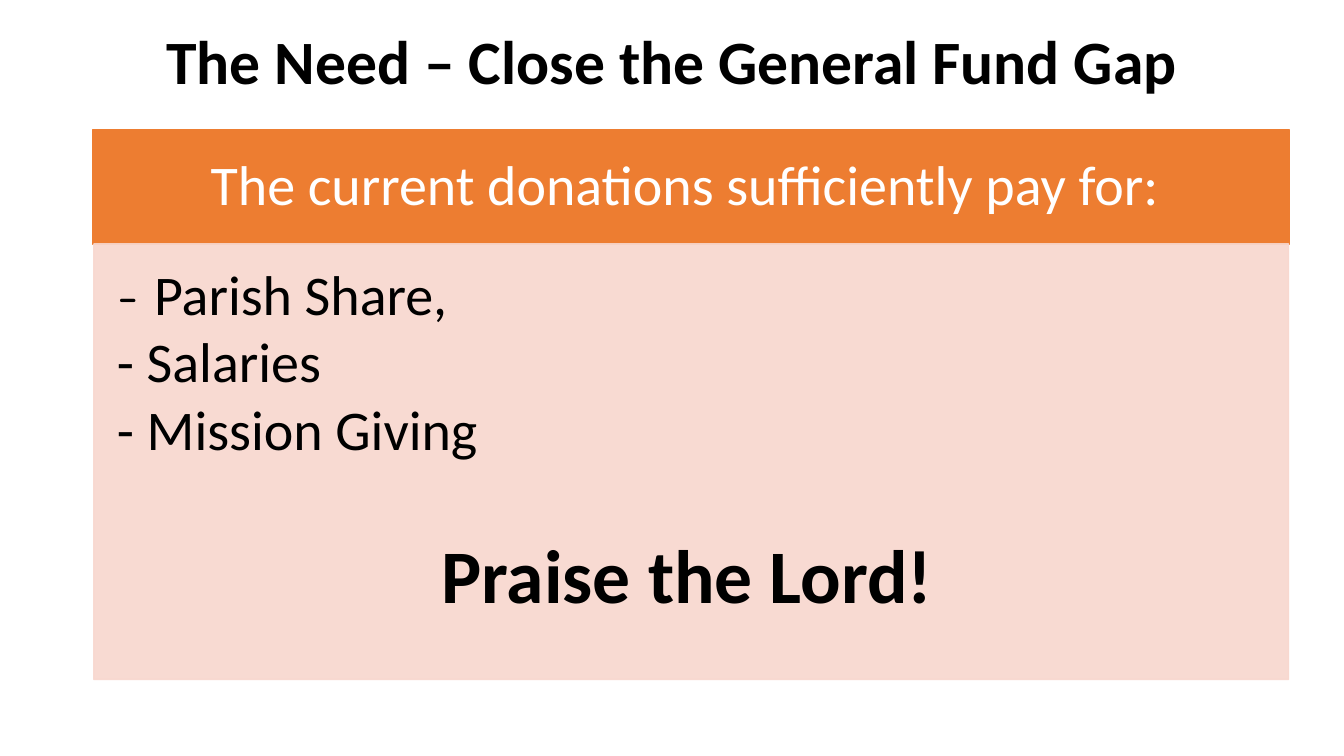
from dataclasses import dataclass

from lxml import etree
from pptx import Presentation
from pptx.dml.color import RGBColor
from pptx.enum.shapes import MSO_SHAPE
from pptx.enum.text import MSO_ANCHOR, PP_ALIGN
from pptx.oxml.ns import qn
from pptx.util import Inches, Pt

RECTANGLE = MSO_SHAPE.RECTANGLE
TOP, MIDDLE = MSO_ANCHOR.TOP, MSO_ANCHOR.MIDDLE
LEFT, CENTER = PP_ALIGN.LEFT, PP_ALIGN.CENTER
COLORS = {"black": "000000", "white": "FFFFFF", "orange": "ED7D31", "blush": "F8D7CE"}
HANGING = 0.31


@dataclass
class Panel:
    left: float
    top: float
    width: float
    height: float
    color: str
    opacity: int
    anchor: MSO_ANCHOR
    insets: tuple[float, float, float, float]


BANNER = Panel(0.92, 1.29, 11.87, 1.13, "orange", 100, MIDDLE, (0.31, 0.18, 0.31, 0.18))
BODY = Panel(0.93, 2.42, 11.85, 4.32, "blush", 90, TOP, (0.23, 0.23, 0.31, 0.35))


def set_frame(frame, anchor, insets):
    frame.word_wrap = True
    frame.vertical_anchor = anchor
    (frame.margin_left, frame.margin_top,
     frame.margin_right, frame.margin_bottom) = map(Inches, insets)


def draw_panel(page, panel: Panel):
    box = page.shapes.add_shape(RECTANGLE, Inches(panel.left), Inches(panel.top),
                                Inches(panel.width), Inches(panel.height))
    box.shadow.inherit = False
    box.fill.solid()
    box.line.width = Pt(1)
    for paint in (box.fill.fore_color, box.line.color):
        paint.rgb = RGBColor.from_string(COLORS[panel.color])
    if panel.opacity < 100:
        for color in box._element.spPr.iter(qn("a:srgbClr")):
            etree.SubElement(color, qn("a:alpha")).set("val", str(panel.opacity * 1000))
    set_frame(box.text_frame, panel.anchor, panel.insets)
    return box.text_frame


def add_span(para, text: str, *, size: int = 40, color: str = "black",
             bold: bool = False, font: str = "Calibri") -> None:
    span = para.add_run()
    span.text = text
    span.font.name = font
    span.font.size = Pt(size)
    span.font.bold = bold
    span.font.color.rgb = RGBColor.from_string(COLORS[color])


def add_para(frame, *, align=LEFT, before: float = 0, after: float = 0,
             hanging: float = 0):
    first = frame.paragraphs[0]
    para = frame.add_paragraph() if first.runs else first
    para.alignment = align
    para.line_spacing = 0.9
    para.space_before = Pt(before)
    para.space_after = Pt(after)
    properties = para._p.get_or_add_pPr()
    properties.set("marL", str(Inches(hanging)))
    properties.set("indent", str(-Inches(hanging)))
    return para


def main() -> None:
    deck = Presentation()
    deck.slide_width, deck.slide_height = Inches(13.33), Inches(7.5)
    page = deck.slides.add_slide(deck.slide_layouts[6])

    # Title
    title = page.shapes.add_textbox(Inches(0.92), Inches(0.24), Inches(11.5), Inches(0.79))
    set_frame(title.text_frame, MIDDLE, (0.1, 0.05, 0.1, 0.05))
    add_span(add_para(title.text_frame, align=CENTER),
             "The Need – Close the General Fund Gap", size=44, bold=True)

    # Banner
    banner = draw_panel(page, BANNER)
    add_span(add_para(banner, align=CENTER),
             "The current donations sufficiently pay for: ", color="white")

    # Paid items and closing line
    body = draw_panel(page, BODY)
    para = add_para(body, after=5, hanging=HANGING)
    add_span(para, "- ", font="Quicksand")
    add_span(para, "Parish Share,")
    for item in ("- Salaries", "- Mission Giving"):
        add_span(add_para(body, after=5, hanging=HANGING), item)
    add_span(add_para(body, align=CENTER, before=49, hanging=HANGING),
             "Praise the Lord!", size=54, bold=True)

    deck.save("out.pptx")


if __name__ == "__main__":
    main()
